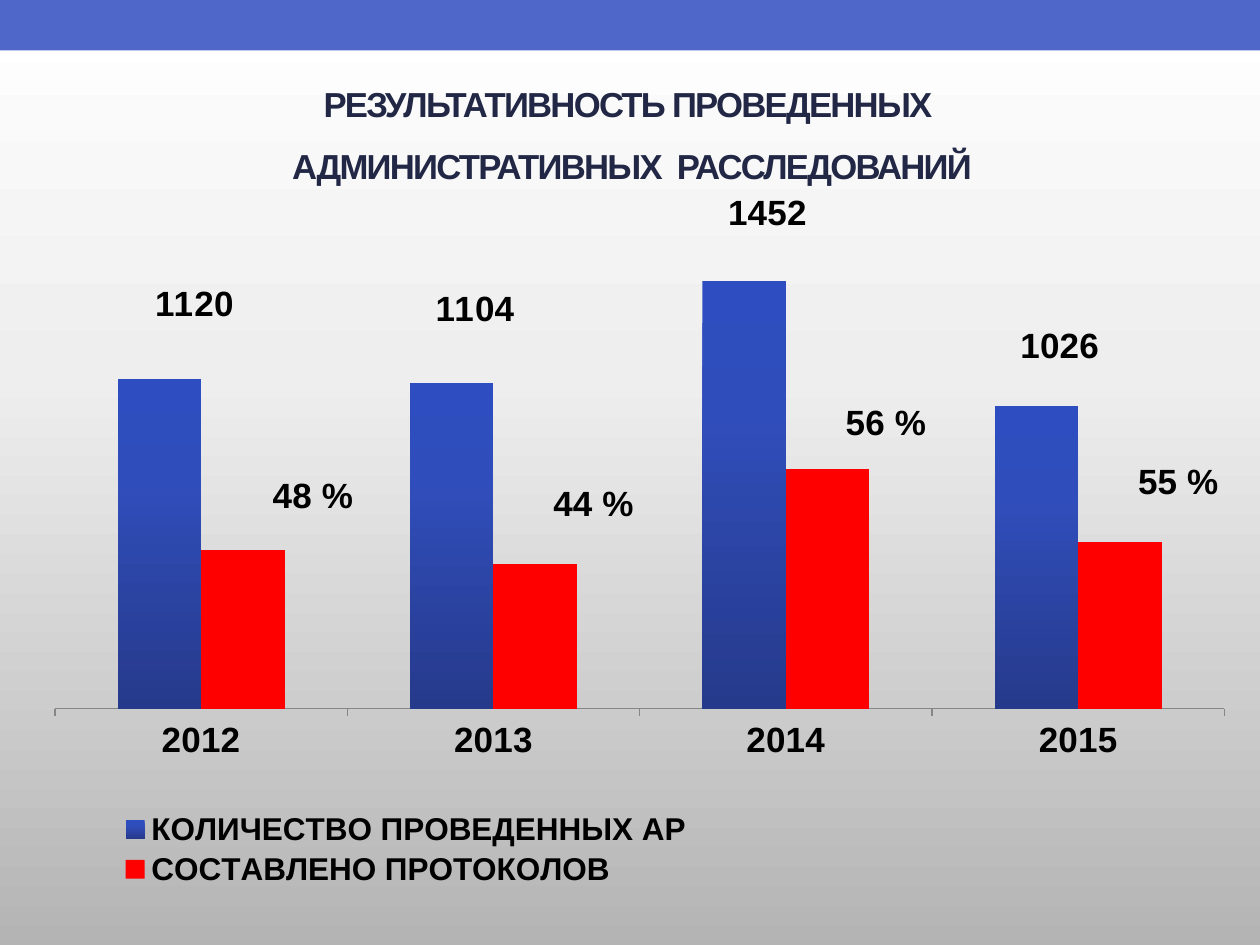
from lxml import etree
from pptx import Presentation
from pptx.chart.data import CategoryChartData
from pptx.dml.color import RGBColor
from pptx.enum.chart import XL_CHART_TYPE, XL_LABEL_POSITION, XL_LEGEND_POSITION, XL_TICK_MARK
from pptx.enum.shapes import MSO_SHAPE
from pptx.enum.text import MSO_ANCHOR, PP_ALIGN
from pptx.oxml.ns import qn
from pptx.util import Pt

RECTANGLE = MSO_SHAPE.RECTANGLE
COLUMNS = XL_CHART_TYPE.COLUMN_CLUSTERED
OUTSIDE_END = XL_LABEL_POSITION.OUTSIDE_END
LEGEND_RIGHT = XL_LEGEND_POSITION.RIGHT
TICK_OUTSIDE = XL_TICK_MARK.OUTSIDE
CENTER = PP_ALIGN.CENTER
TOP = MSO_ANCHOR.TOP

FONT = "Arial"
COLORS = {
    "white": "FFFFFF", "light": "EEEEEE", "gray": "B4B4B4",
    "band": "4E67C8", "title": "212745", "text": "000000", "axis": "868686",
    "blue_top": "2D4DC1", "blue_upper": "304EBB", "blue_bottom": "263A8B", "red": "FF0000",
}


def set_gradient(fill, owner, stops):
    fill.gradient()
    fill.gradient_angle = 270
    stop_list = owner.xpath(".//a:gsLst")[0]
    for stop in list(stop_list):
        stop_list.remove(stop)
    for percent, color in stops:
        stop = etree.SubElement(stop_list, qn("a:gs"), pos=str(percent * 1000))
        etree.SubElement(stop, qn("a:srgbClr"), val=COLORS[color])


def make_layout(modes, **values):
    layout = etree.Element(qn("c:layout"))
    manual = etree.SubElement(layout, qn("c:manualLayout"))
    for name, value in {**modes, **values}.items():
        etree.SubElement(manual, qn("c:" + name), val=str(value))
    return layout


deck = Presentation()
deck.slide_width, deck.slide_height = Pt(720), Pt(540)
page = deck.slides.add_slide(deck.slide_layouts[6])
set_gradient(page.background.fill, page._element, [(0, "white"), (40, "light"), (100, "gray")])

for top, height, color in [(17.3, 18, "white"), (0, 28.8, "band")]:
    band = page.shapes.add_shape(RECTANGLE, 0, Pt(top), Pt(720), Pt(height))
    band.shadow.inherit = False
    band.fill.solid()
    band.fill.fore_color.rgb = RGBColor.from_string(COLORS[color])
    band.line.fill.background()

title = page.shapes.add_textbox(Pt(37), Pt(35.4), Pt(648), Pt(72))
frame = title.text_frame
frame.word_wrap = True
frame.vertical_anchor = TOP
frame.margin_top = frame.margin_bottom = 0
for number, line in enumerate(["РЕЗУЛЬТАТИВНОСТЬ ПРОВЕДЕННЫХ ", "АДМИНИСТРАТИВНЫХ  РАССЛЕДОВАНИЙ"]):
    para = frame.add_paragraph() if number else frame.paragraphs[0]
    para.alignment = CENTER
    para.line_spacing = 1.5
    span = para.add_run()
    span.text = line
    span.font.name = FONT
    span.font.size = Pt(19.8)
    span.font.bold = True
    span.font.color.rgb = RGBColor.from_string(COLORS["title"])
    span._r.get_or_add_rPr().set("spc", "-100")

data = CategoryChartData()
data.categories = ["2012", "2013", "2014", "2015"]
data.add_series("КОЛИЧЕСТВО ПРОВЕДЕННЫХ АР", [1120, 1104, 1452, 1026])
data.add_series("СОСТАВЛЕНО ПРОТОКОЛОВ", [539, 489, 813, 564])
chart = page.shapes.add_chart(COLUMNS, Pt(31), Pt(111), Pt(669), Pt(402.5), data).chart
chart.has_title = False
chart.font.name = FONT
chart.font.size = Pt(18)
chart.font.color.rgb = RGBColor.from_string(COLORS["text"])

plot = chart.plots[0]
plot.gap_width = 150
plot.overlap = 0
plot.vary_by_categories = False
chart.value_axis.visible = False
chart.value_axis.has_major_gridlines = False
axis = chart.category_axis
axis.major_tick_mark = TICK_OUTSIDE
axis.format.line.color.rgb = RGBColor.from_string(COLORS["axis"])
axis.format.line.width = Pt(0.75)
axis.tick_labels.font.size = Pt(20)
axis.tick_labels.font.bold = True

count_series, protocol_series = plot.series
set_gradient(count_series.format.fill, count_series._element,
             [(0, "blue_top"), (30, "blue_upper"), (100, "blue_bottom")])
protocol_series.format.fill.solid()
protocol_series.format.fill.fore_color.rgb = RGBColor.from_string(COLORS["red"])

label_shifts = [
    [(0.03, -0.07), (0.02, -0.07), (0.02, -0.06), (0.02, -0.05)],
    [(0.06, -0.04), (0.05, -0.05), (0.05, -0.03), (0.05, -0.05)],
]
shares = ["48 %", "44 %", "56 %", "55 %"]
for series, shifts in zip(plot.series, label_shifts):
    series.invert_if_negative = False
    labels = series.data_labels
    labels.show_value = True
    labels.position = OUTSIDE_END
    fonts = [labels.font]
    for number, (across, down) in enumerate(shifts):
        label = series.points[number].data_label
        if series.name == protocol_series.name:
            span = label.text_frame.paragraphs[0].add_run()
            span.text = shares[number]
            fonts.append(span.font)
        else:
            fonts.append(label.font)
        label.position = OUTSIDE_END
        element = series._element.xpath(f".//c:dLbl[c:idx/@val='{number}']")[0]
        for old in element.findall(qn("c:layout")):
            element.remove(old)
        element.insert(1, make_layout({}, x=across, y=down))
    for font in fonts:
        font.name = FONT
        font.size = Pt(20)
        font.bold = True
        font.color.rgb = RGBColor.from_string(COLORS["text"])
    for leader in series._element.xpath(".//c:showLeaderLines"):
        leader.set("val", "0")
    extensions = etree.SubElement(series._element.xpath("./c:dLbls")[0], qn("c:extLst"))
    extension = etree.SubElement(extensions, qn("c:ext"), uri="{CE6537A1-D6FC-4f65-9D91-7224C49458BB}")
    namespace = "http://schemas.microsoft.com/office/drawing/2012/chart"
    etree.SubElement(extension, f"{{{namespace}}}showLeaderLines", nsmap={"c15": namespace}, val="0")

chart.has_legend = True
legend = chart.legend
legend.position = LEGEND_RIGHT
legend.include_in_layout = False
legend.font.name = FONT
legend.font.size = Pt(18)
legend.font.bold = True
legend.font.color.rgb = RGBColor.from_string(COLORS["text"])
edges = {"xMode": "edge", "yMode": "edge"}
legend_element = legend._element
for old in legend_element.findall(qn("c:layout")):
    legend_element.remove(old)
legend_element.find(qn("c:legendPos")).addnext(make_layout(edges, x=0.04, y=0.87, w=0.52, h=0.12))

plot_area = chart._chartSpace.xpath(".//c:plotArea")[0]
for old in plot_area.findall(qn("c:layout")):
    plot_area.remove(old)
plot_area.insert(0, make_layout({"layoutTarget": "inner", **edges}, x=0, y=0.06, w=1, h=0.67))

deck.save("out.pptx")
